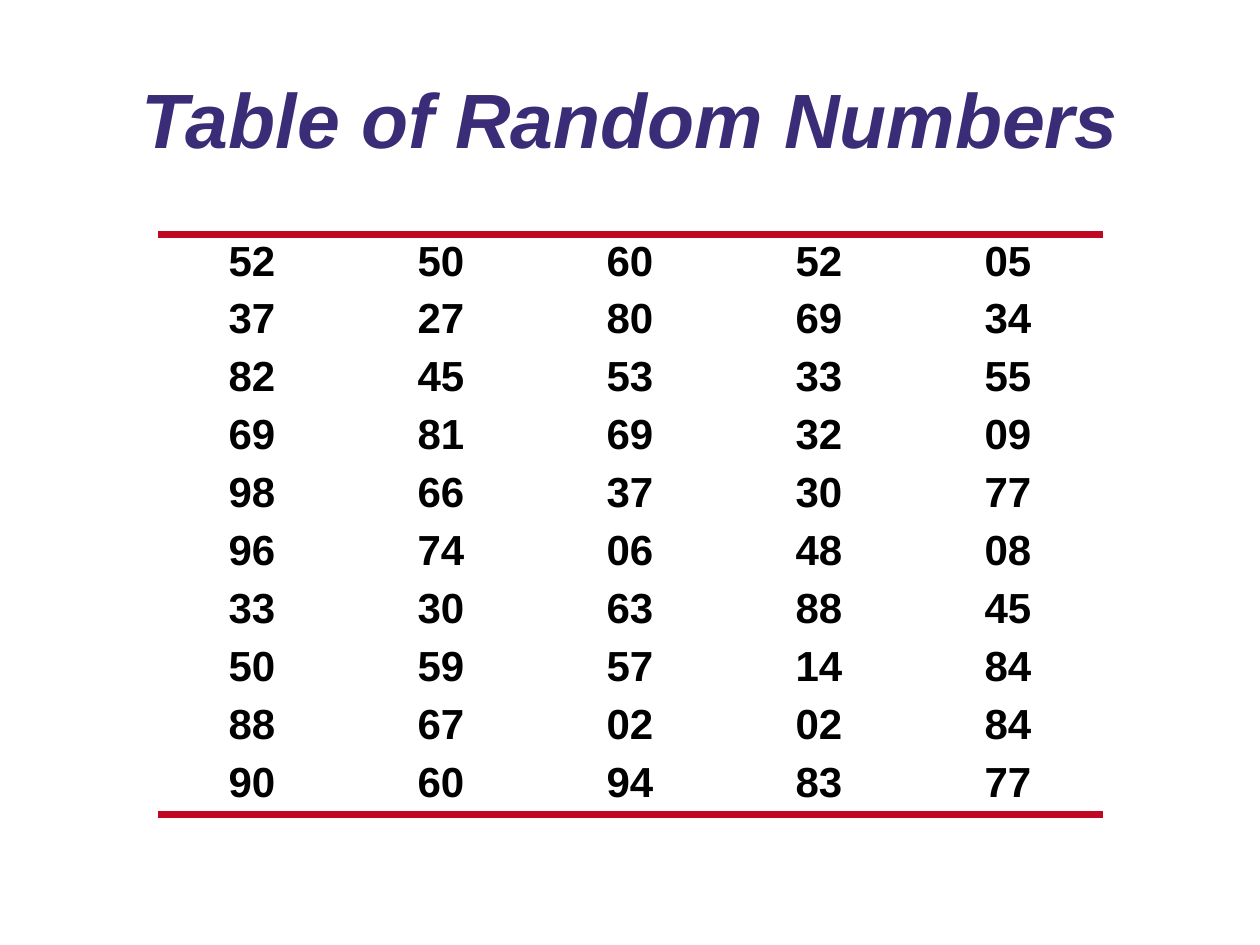
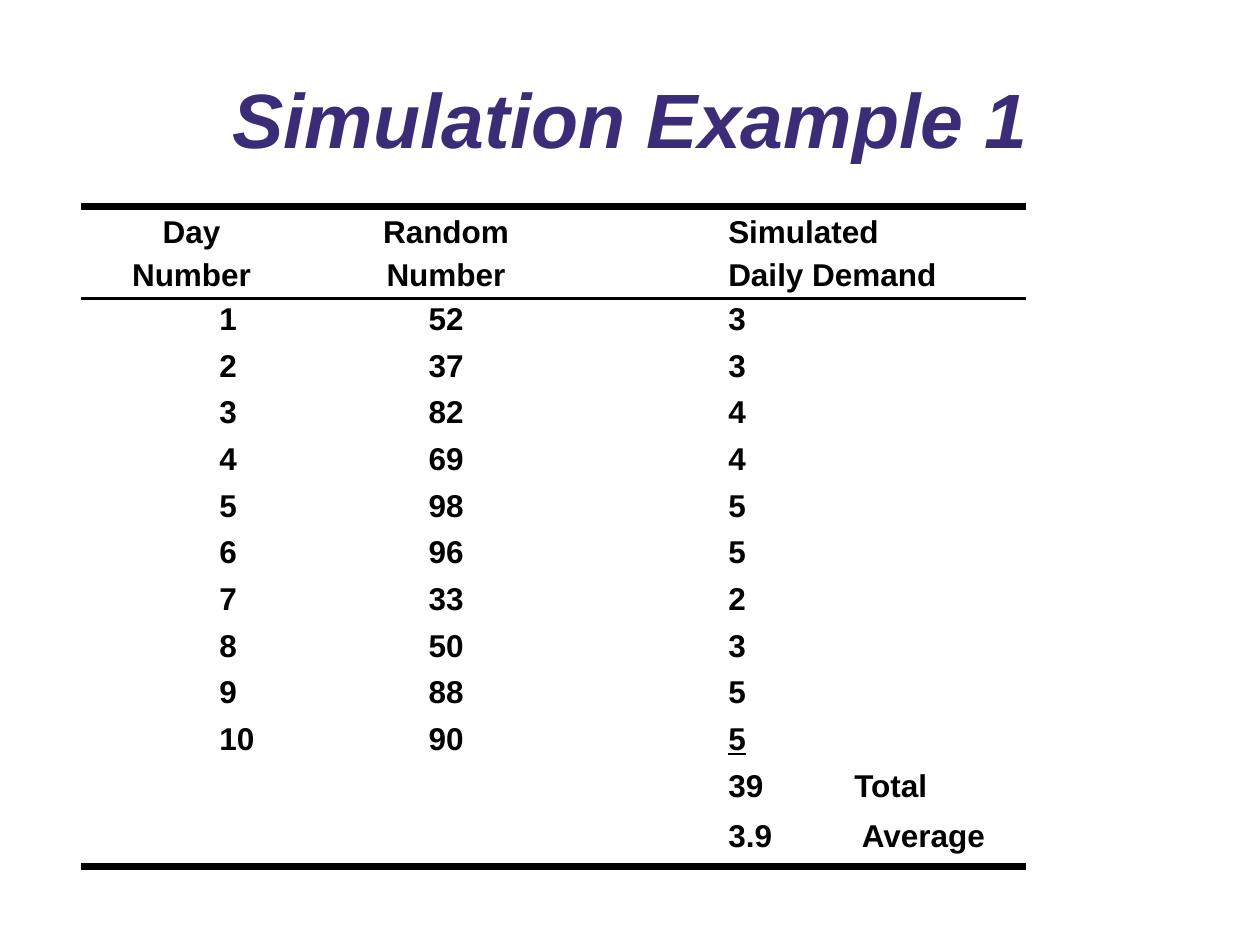
from dataclasses import dataclass

from lxml.etree import SubElement
from pptx import Presentation
from pptx.dml.color import RGBColor
from pptx.enum.text import MSO_ANCHOR as Anchor, PP_ALIGN as Align
from pptx.oxml.ns import qn
from pptx.util import Inches, Pt


@dataclass(frozen=True)
class Theme:
    font: str = "Arial"
    title_color: str = "3A2C76"
    text_color: str = "000000"
    accent: str = "BF0922"
    title_size: int = 44
    number_size: int = 24
    body_size: int = 18
    thick_rule: float = 4.5
    thin_rule: float = 2.25
    line_spacing: float = 0.9
    header_spacing: float = 0.85
    paragraph_gap: float = 0.4
    tab_width: float = 1.0
    plain_table_style: str = "{2D5ABB26-0587-4C30-8999-92F81FD0307C}"


RANDOM_NUMBERS = [
    "52 50 60 52 05", "37 27 80 69 34", "82 45 53 33 55", "69 81 69 32 09",
    "98 66 37 30 77", "96 74 06 48 08", "33 30 63 88 45", "50 59 57 14 84",
    "88 67 02 02 84", "90 60 94 83 77",
]
DEMANDS = [3, 3, 4, 4, 5, 5, 2, 3, 5, 5]


class Deck:
    """Holds the theme and the current slide and draws each kind of element."""

    def __init__(self, theme):
        self.theme = theme
        self.presentation = Presentation()
        self.presentation.slide_width = Inches(10)
        self.presentation.slide_height = Inches(7.5)
        self.slide = None

    def add_slide(self, title):
        self.slide = self.presentation.slides.add_slide(self.presentation.slide_layouts[6])
        shape = self.slide.shapes.add_textbox(Inches(0.58), Inches(0.46), Inches(8.85), Inches(1.04))
        frame = shape.text_frame
        frame.word_wrap = True
        frame.vertical_anchor = Anchor.MIDDLE
        paragraph = frame.paragraphs[0]
        paragraph.alignment = Align.CENTER
        paragraph.line_spacing = self.theme.line_spacing
        self.add_run(paragraph, title, self.theme.title_size, self.theme.title_color).italic = True

    def add_run(self, paragraph, text, size, color):
        run = paragraph.add_run()
        run.text = text
        run.font.name = self.theme.font
        run.font.size = Pt(size)
        run.font.bold = True
        run.font.color.rgb = RGBColor.from_string(color)
        return run.font

    def add_table(self, left, top, widths, heights, rows, size):
        shape = self.slide.shapes.add_table(
            len(rows), len(widths), Inches(left), Inches(top),
            Inches(sum(widths)), Inches(sum(heights)))
        table = shape.table
        table.first_row = table.horz_banding = False
        table._tbl.tblPr.find(qn("a:tableStyleId")).text = self.theme.plain_table_style
        for column, width in zip(table.columns, widths):
            column.width = Inches(width)
        for row, height, texts in zip(table.rows, heights, rows):
            row.height = Inches(height)
            for cell, text in zip(row.cells, texts):
                cell.fill.background()
                self.fill_cell(cell, text, size)
        return table

    def fill_cell(self, cell, text, size):
        lines = text.split("\n")
        for index, line in enumerate(lines):
            frame = cell.text_frame
            paragraph = frame.add_paragraph() if index else frame.paragraphs[0]
            paragraph.alignment = Align.LEFT if line.startswith("\t") else Align.CENTER
            paragraph.line_spacing = (
                self.theme.header_spacing if len(lines) > 1 else self.theme.line_spacing)
            paragraph.space_after = Pt(size * self.theme.paragraph_gap)
            paragraph._p.get_or_add_pPr().set("defTabSz", str(Inches(self.theme.tab_width)))
            if line:
                self.add_run(paragraph, line, size, self.theme.text_color)
            else:
                ending = SubElement(paragraph._p, qn("a:endParaRPr"), sz=str(size * 100))
                SubElement(ending, qn("a:latin"), typeface=self.theme.font)

    def rule_row(self, row, side, color, width):
        for cell in row.cells:
            properties = cell._tc.get_or_add_tcPr()
            line = SubElement(properties, qn(f"a:ln{side}"), w=str(Pt(width)))
            fill = SubElement(line, qn("a:solidFill"))
            SubElement(fill, qn("a:srgbClr"), val=color)
            properties.append(properties.find(qn("a:noFill")))

    def frame_table(self, table, color):
        rows = list(table.rows)
        self.rule_row(rows[0], "T", color, self.theme.thick_rule)
        self.rule_row(rows[-1], "B", color, self.theme.thick_rule)

    def random_numbers_slide(self):
        self.add_slide("Table of Random Numbers")
        rows = [line.split() for line in RANDOM_NUMBERS]
        table = self.add_table(1.25, 1.86, [1.5] * 5, [0.46] * len(rows), rows, self.theme.number_size)
        for cell in table.iter_cells():
            cell.vertical_anchor = Anchor.MIDDLE
        self.frame_table(table, self.theme.accent)

    def simulation_slide(self):
        self.add_slide("Simulation Example 1")
        header = ["Day\nNumber", "Random\nNumber", "\tSimulated\n\tDaily Demand"]
        days = [
            [f"\t{day}", numbers.split()[0], f"\t{demand}"]
            for day, (numbers, demand) in enumerate(zip(RANDOM_NUMBERS, DEMANDS), 1)]
        total = sum(DEMANDS)
        summary = [["", "", f"\t{total}\tTotal"], ["", "", f"\t{total / len(DEMANDS)}\t Average"]]
        rows = [header, *days, *summary]
        heights = [0.73] + [0.37] * (len(rows) - 1)
        table = self.add_table(0.64, 1.64, [1.76, 2.28, 3.46], heights, rows, self.theme.body_size)
        for cell in table.rows[0].cells:
            cell.vertical_anchor = Anchor.BOTTOM
        last_demand = table.cell(len(days), 2).text_frame.paragraphs[0]
        last_demand.runs[0].font.underline = True
        self.frame_table(table, self.theme.text_color)
        self.rule_row(table.rows[0], "B", self.theme.text_color, self.theme.thin_rule)


def main():
    deck = Deck(Theme())
    deck.random_numbers_slide()
    deck.simulation_slide()
    deck.presentation.save("out.pptx")


if __name__ == "__main__":
    main()
